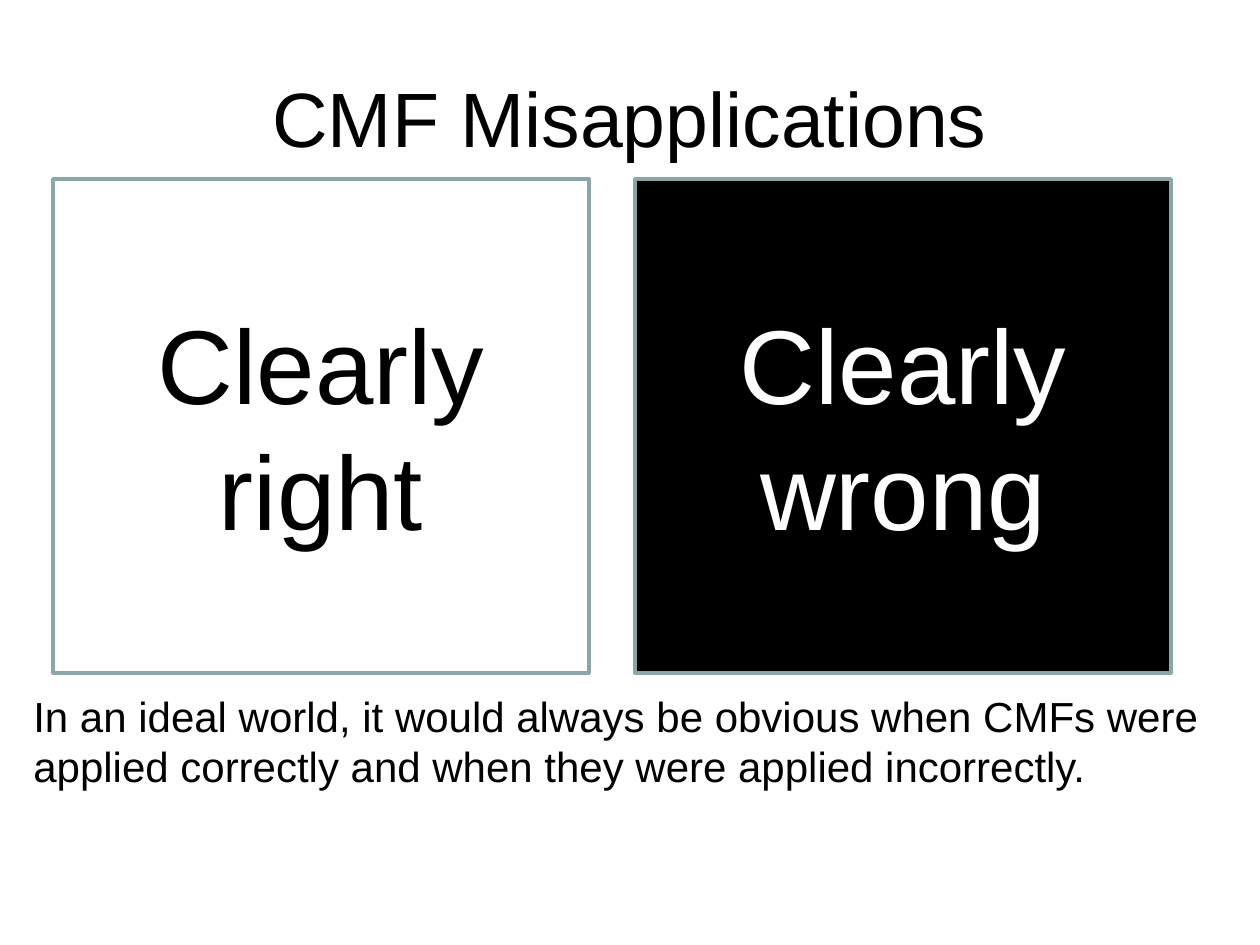
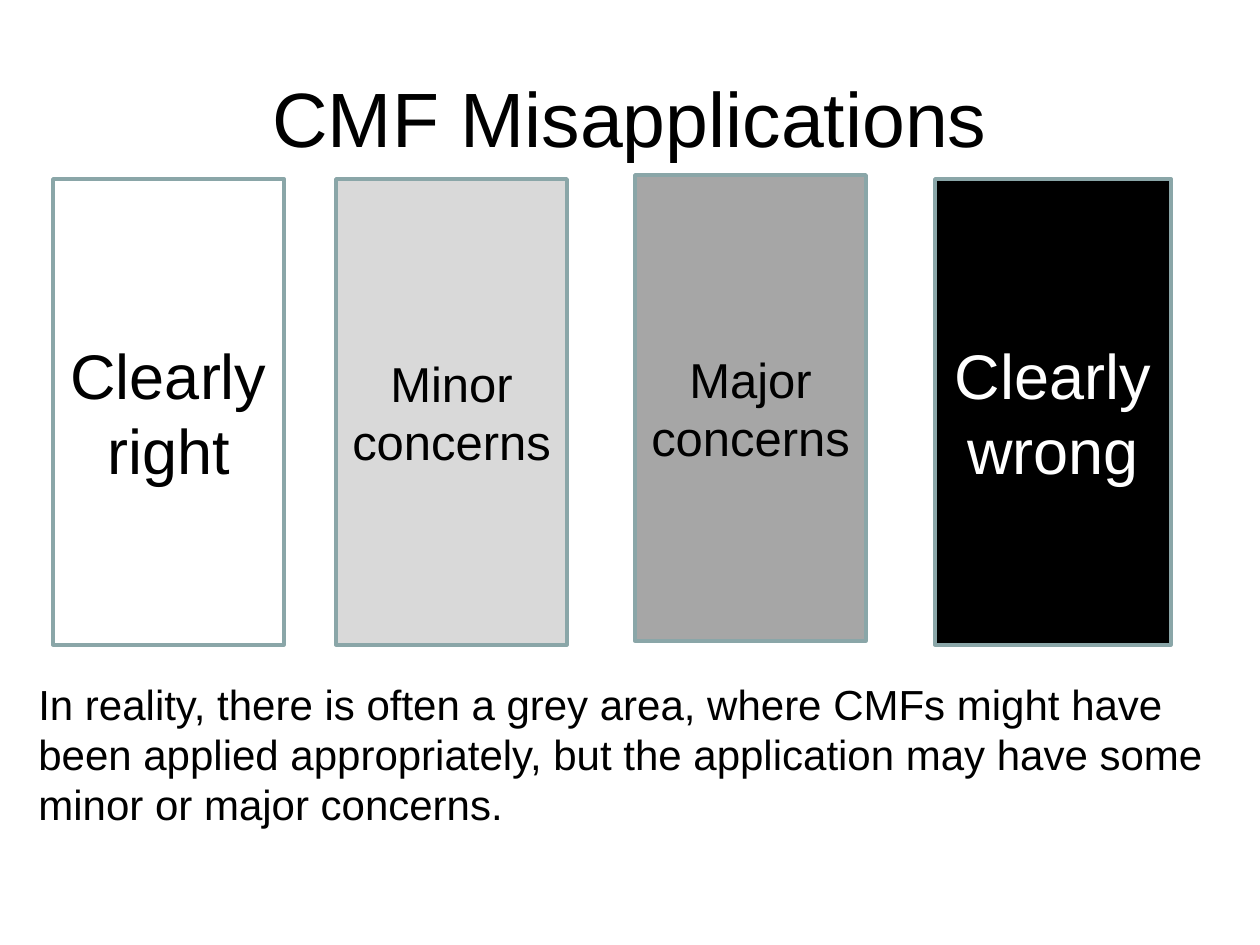
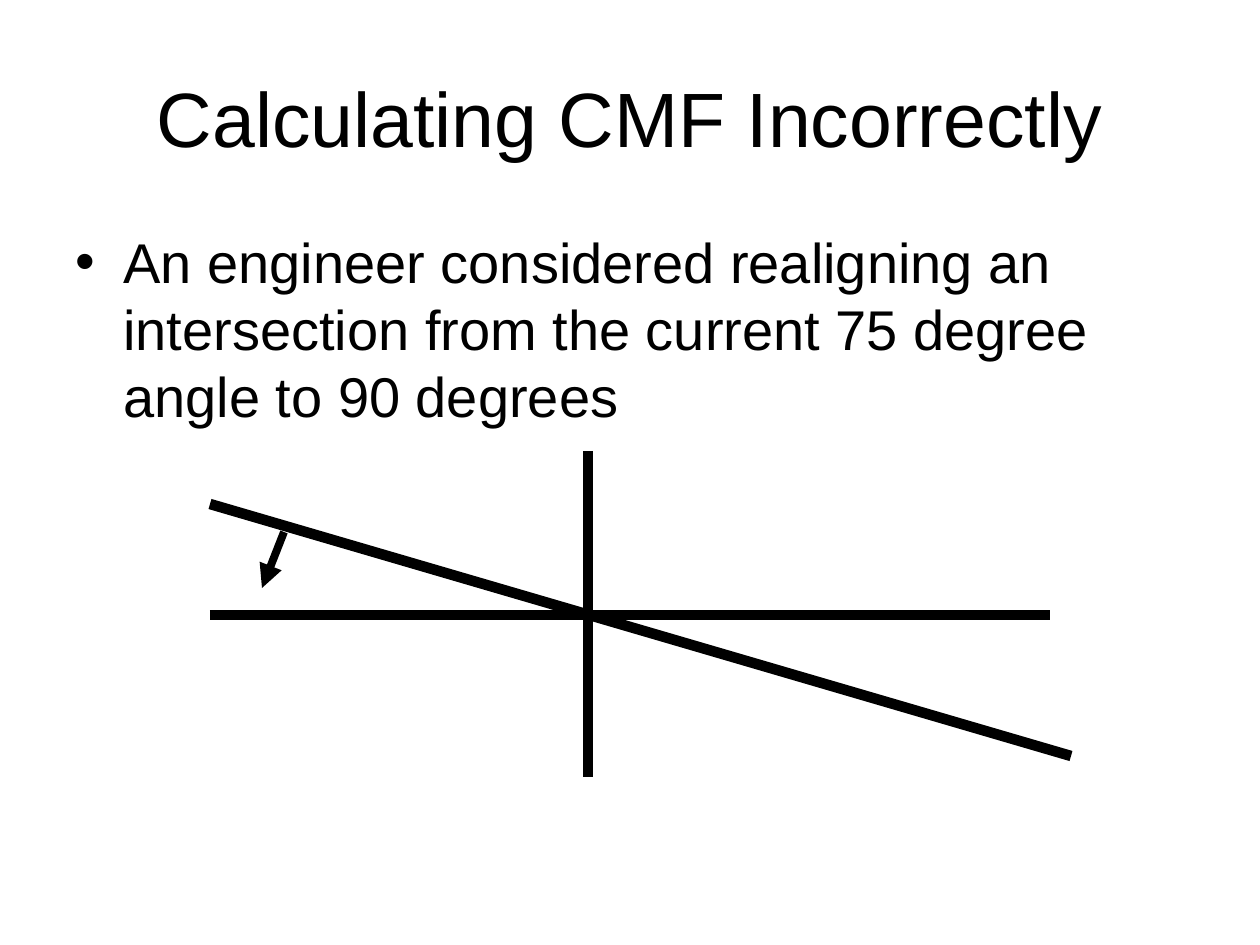
from lxml import etree
from pptx import Presentation
from pptx import util as u
from pptx.dml.color import RGBColor
from pptx.enum import shapes, text
from pptx.oxml import ns

SCALE = 914400 / 126
BLACK = RGBColor(0x00, 0x00, 0x00)
WHITE = RGBColor(0xFF, 0xFF, 0xFF)
LIGHT = RGBColor(0xD9, 0xD9, 0xD9)
GREY = RGBColor(0xA6, 0xA6, 0xA6)
EDGE = RGBColor(0x8A, 0xA6, 0xA8)
FONT = "Arial"
LEFT, MID = text.PP_ALIGN.LEFT, text.PP_ALIGN.CENTER
TOP, CENTER = text.MSO_ANCHOR.TOP, text.MSO_ANCHOR.MIDDLE


def emu(*vals):
    return [round(v * SCALE) for v in vals]


class Deck:
    def __init__(self):
        self.prs = Presentation()
        self.prs.slide_width, self.prs.slide_height = emu(1260, 945)

    def slide(self, title):
        page = self.prs.slides.add_slide(self.prs.slide_layouts[6])
        self.items = page.shapes
        self.label((63, 38, 1134, 158), title, 44, MID, CENTER)

    def fill_in(self, shape, words, size, color, align, anchor):
        """Put one styled run of text into the shape."""
        frame = shape.text_frame
        frame.word_wrap = True
        frame.vertical_anchor = anchor
        para = frame.paragraphs[0]
        para.alignment = align
        run = para.add_run()
        run.text = words
        run.font.name = FONT
        run.font.size = u.Pt(size)
        run.font.color.rgb = color
        return para

    def label(self, area, words, size, align=LEFT, anchor=TOP):
        box = self.items.add_textbox(*emu(*area))
        return self.fill_in(box, words, size, BLACK, align, anchor)

    def bullet(self, area, words, size, indent):
        props = self.label(area, words, size)._p.get_or_add_pPr()
        step, = emu(indent)
        props.set("marL", str(step))
        props.set("indent", str(-step))
        etree.SubElement(props, ns.qn("a:buFont"), typeface=FONT)
        etree.SubElement(props, ns.qn("a:buChar"), char="•")

    def card(self, area, words, size, fill, color=BLACK):
        box = self.items.add_shape(shapes.MSO_SHAPE.RECTANGLE, *emu(*area))
        box.shadow.inherit = False
        box.fill.solid()
        box.fill.fore_color.rgb = fill
        box.line.color.rgb = EDGE
        box.line.width = u.Pt(2)
        self.fill_in(box, words, size, color, MID, CENTER)

    def line(self, ends, width=6, arrow=False):
        link = self.items.add_connector(
            shapes.MSO_CONNECTOR.STRAIGHT, *emu(*ends))
        link.line.color.rgb = BLACK
        link.line.width = u.Pt(width)
        props = link._element.spPr
        if arrow:
            etree.SubElement(props.find(ns.qn("a:ln")),
                             ns.qn("a:tailEnd"), type="triangle")
        etree.SubElement(props, ns.qn("a:effectLst"))


def main():
    deck = Deck()

    deck.slide("CMF Misapplications")
    deck.card((53, 179, 536, 494), "Clearly right", 60, WHITE)
    deck.card((635, 179, 536, 494), "Clearly wrong", 60, BLACK, WHITE)
    deck.label((21, 684, 1207, 115),
               "In an ideal world, it would always be obvious when CMFs were "
               "applied correctly and when they were applied incorrectly.", 24)

    deck.slide("CMF Misapplications")
    deck.card((53, 179, 231, 466), "Clearly right", 36, WHITE)
    deck.card((935, 179, 236, 466), "Clearly wrong", 36, BLACK, WHITE)
    deck.card((336, 179, 231, 466), "Minor concerns", 28, LIGHT)
    deck.card((635, 175, 231, 466), "Major concerns", 28, GREY)
    deck.label((26, 672, 1207, 165),
               "In reality, there is often a grey area, where CMFs might have "
               "been applied appropriately, but the application may have some "
               "minor or major concerns.", 24)

    deck.slide("Calculating CMF Incorrectly")
    deck.bullet((63, 221, 1134, 624),
                "An engineer considered realigning an intersection from the "
                "current 75 degree angle to 90 degrees", 32, 48)
    for road in ((588, 451, 588, 777), (210, 504, 1071, 756),
                 (210, 615, 1050, 615)):
        deck.line(road)
    deck.line((284, 532, 262, 588), 4.5, arrow=True)

    deck.prs.save("out.pptx")


if __name__ == "__main__":
    main()
